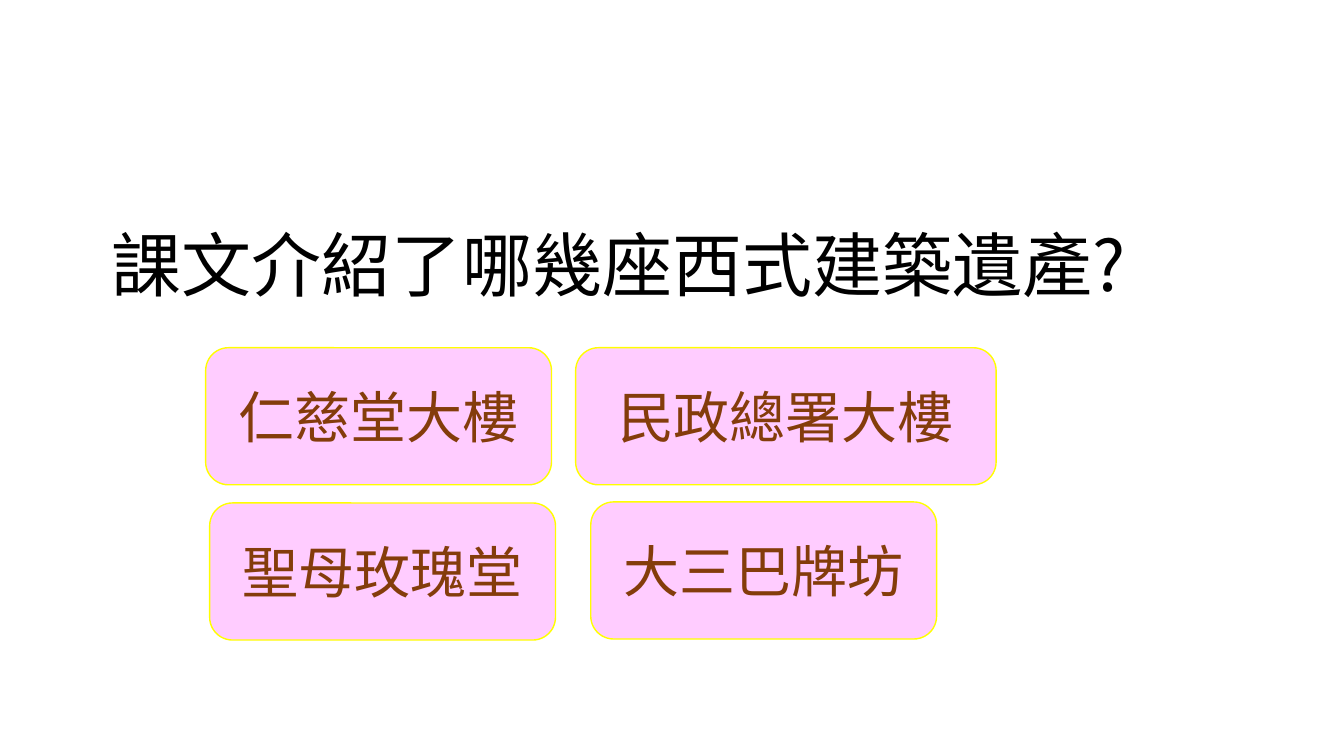
from dataclasses import dataclass
from typing import Any

from lxml import etree
from pptx import Presentation
from pptx.dml.color import RGBColor
from pptx.enum.shapes import MSO_SHAPE
from pptx.enum.text import MSO_ANCHOR, MSO_AUTO_SIZE, PP_ALIGN
from pptx.oxml.ns import qn
from pptx.util import Inches, Pt

ROUND = MSO_SHAPE.ROUNDED_RECTANGLE
TOP, MIDDLE = MSO_ANCHOR.TOP, MSO_ANCHOR.MIDDLE
LEFT, CENTER = PP_ALIGN.LEFT, PP_ALIGN.CENTER
GROW = MSO_AUTO_SIZE.SHAPE_TO_FIT_TEXT
FACE = "Noto Sans CJK SC"
TALL = 1.36


@dataclass
class Card:
    text: str
    left: float
    top: float
    width: float = 3.43


CARDS = [
    Card("仁慈堂大樓", 2.04, 3.45),
    Card("民政總署大樓", 5.71, 3.45, 4.17),
    Card("聖母玫瑰堂", 2.08, 4.99),
    Card("大三巴牌坊", 5.86, 4.98),
]


def paint(color: Any, code: str) -> None:
    color.rgb = RGBColor.from_string(code)


def apply(item: Any, values: dict[str, Any]) -> None:
    for name, value in values.items():
        setattr(item, name, value)


def write(shape: Any, text: str, size: int, code: str, align: Any,
          frame: dict[str, Any]) -> None:
    apply(shape.text_frame, frame)
    para = shape.text_frame.paragraphs[0]
    para.alignment = align
    run = para.add_run()
    run.text = text
    apply(run.font, {"name": FACE, "size": Pt(size)})
    paint(run.font.color, code)
    east = etree.SubElement(run.font._element, qn("a:ea"))
    east.set("typeface", FACE)


def draw_title(title: Any, text: str) -> None:
    apply(title, {"left": Inches(1.01), "top": Inches(2.15),
                  "width": Inches(10.37), "height": Inches(0.94)})
    write(title, text, 50, "000000", LEFT,
          {"word_wrap": False, "auto_size": GROW, "vertical_anchor": TOP})


def draw_card(slide: Any, card: Card) -> None:
    shape = slide.shapes.add_shape(
        ROUND, Inches(card.left), Inches(card.top),
        Inches(card.width), Inches(TALL))
    shape.shadow.inherit = False
    shape.fill.solid()
    paint(shape.fill.fore_color, "FFCCFF")
    paint(shape.line.color, "FFFF00")
    shape.line.width = Pt(1)
    write(shape, card.text, 40, "843C0B", CENTER,
          {"word_wrap": True, "vertical_anchor": MIDDLE})


def main() -> None:
    deck = Presentation()
    apply(deck, {"slide_width": Inches(13.33), "slide_height": Inches(7.5)})
    slide = deck.slides.add_slide(deck.slide_layouts[5])
    draw_title(slide.shapes.title, "課文介紹了哪幾座西式建築遺產?")
    for card in CARDS:
        draw_card(slide, card)
    deck.save("out.pptx")


if __name__ == "__main__":
    main()
